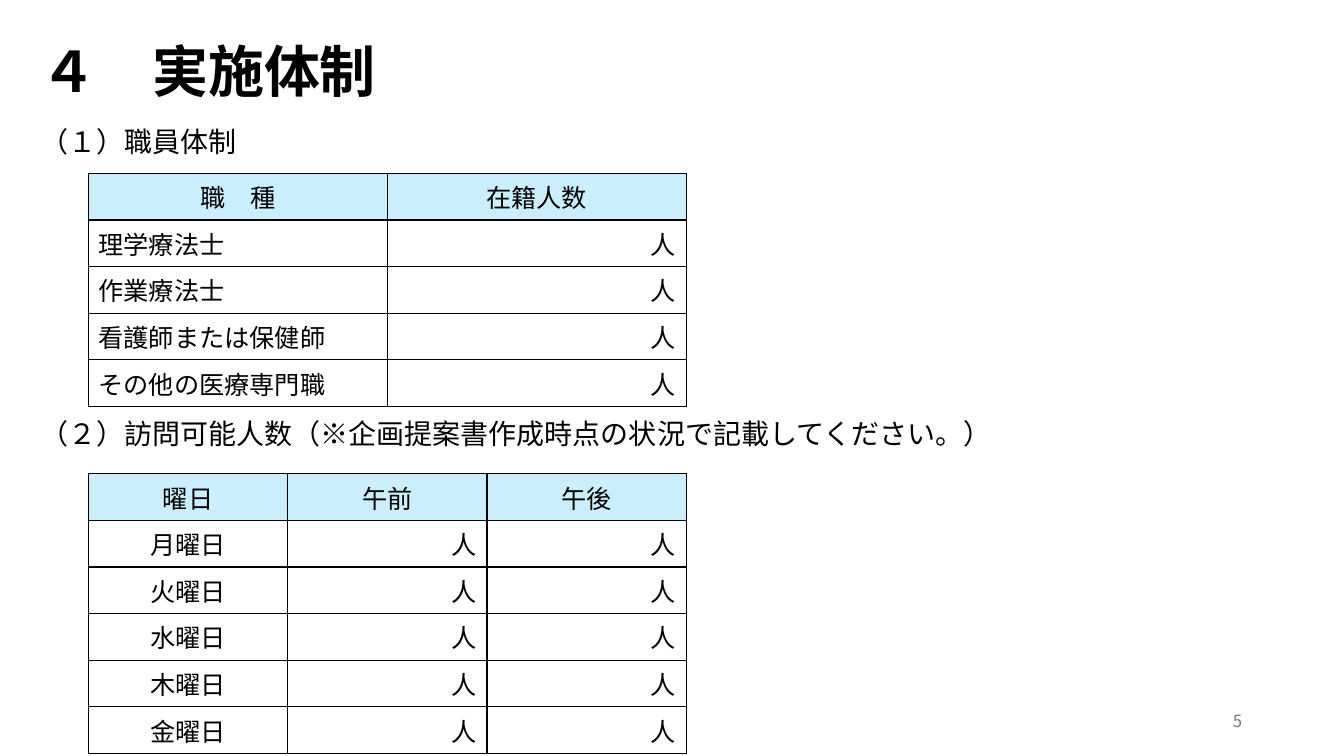
from pptx import Presentation
from pptx import util as u
from pptx.dml.color import RGBColor
from pptx.enum import text
from pptx.oxml import parse_xml
from pptx.oxml.ns import nsdecls, qn

FONT = "Noto Sans CJK JP"
COLORS = {"ink": "000000", "header": "CAEEFB", "page": "797979"}
LEFT, CENTER, RIGHT = (text.PP_ALIGN.LEFT, text.PP_ALIGN.CENTER,
                       text.PP_ALIGN.RIGHT)
HEADING = {"size": u.Pt(20), "bold": False}
CELL = {"size": u.Pt(18), "bold": False}
ROW_HEIGHT = 1.03


def write(tf, words, fmt, align=LEFT, color="ink", spacing=None):
    p = tf.paragraphs[0]
    p.alignment = align
    p.line_spacing = spacing
    r = p.add_run()
    r.text = words
    for name, value in {"name": FONT, **fmt}.items():
        setattr(r.font, name, value)
    r.font.color.rgb = RGBColor.from_string(COLORS[color])
    r.font._element.get_or_add_latin().addnext(
        parse_xml(f'<a:ea {nsdecls("a")} typeface="{FONT}"/>'))


def set_frame(tf):
    for name, value in {"word_wrap": True, "auto_size": text.MSO_AUTO_SIZE.NONE,
                        "vertical_anchor": text.MSO_ANCHOR.MIDDLE}.items():
        setattr(tf, name, value)


def add_title(s, box, words):
    sp = s.shapes.title
    sp.left, sp.top, sp.width, sp.height = map(u.Cm, box)
    set_frame(sp.text_frame)
    write(sp.text_frame, words, {"size": u.Pt(40), "bold": True}, spacing=0.9)


def add_text(s, box, words, fmt, **style):
    sp = s.shapes.add_textbox(*map(u.Cm, box))
    set_frame(sp.text_frame)
    write(sp.text_frame, words, fmt, **style)


def add_borders(cell):
    tc_pr = cell._tc.get_or_add_tcPr()
    for side in "LRTB":
        tc_pr.append(parse_xml(
            f'<a:ln{side} {nsdecls("a")} w="12700"><a:solidFill>'
            f'<a:srgbClr val="{COLORS["ink"]}"/></a:solidFill></a:ln{side}>'))


def add_count_table(s, left, top, width, header, labels, label_align):
    """Header row, then one row per label with 人 in every other column."""
    rows = [header] + [[label] + ["人"] * (len(header) - 1) for label in labels]
    frame = s.shapes.add_table(len(rows), len(header), u.Cm(left), u.Cm(top),
                               u.Cm(width), u.Cm(ROW_HEIGHT * len(rows)))
    table = frame.table
    table.first_row = table.horz_banding = False
    for column in table.columns:
        column.width = u.Cm(width / len(header))
    for i, row in enumerate(rows):
        table.rows[i].height = u.Cm(ROW_HEIGHT)
        for j, words in enumerate(row):
            cell = table.cell(i, j)
            add_borders(cell)
            if i == 0:
                cell.fill.solid()
                cell.fill.fore_color.rgb = RGBColor.from_string(COLORS["header"])
                align = CENTER
            else:
                cell.fill.background()
                align = label_align if j == 0 else RIGHT
            if align == CENTER:
                cell.vertical_anchor = text.MSO_ANCHOR.MIDDLE
            write(cell.text_frame, words, CELL, align)


def add_section(s, left, top, width, heading, table_gap, *table):
    """Heading with an indented table below it."""
    add_text(s, (left, top, width, 1.27), heading, HEADING, spacing=0.9)
    add_count_table(s, left + 1.47, top + table_gap, 15.06, *table)


def main():
    prs = Presentation()
    prs.slide_width, prs.slide_height = u.Inches(13.333), u.Inches(7.5)
    s = prs.slides.add_slide(prs.slide_layouts[5])
    left, width = 0.76, 31.6

    # Title
    add_title(s, (left, 0.58, width, 2.59), "４　実施体制")

    # Staff by profession
    add_section(s, left, 2.97, width, "（１）職員体制", 1.4,
                ["職　種", "在籍人数"],
                ["理学療法士", "作業療法士", "看護師または保健師",
                 "その他の医療専門職"], LEFT)

    # Visits by weekday
    add_section(s, left, 10.34, width,
                "（２）訪問可能人数（※企画提案書作成時点の状況で記載してください。）",
                1.6, ["曜日", "午前", "午後"],
                [f"{day}曜日" for day in "月火水木金"], CENTER)

    # Page number
    add_text(s, (23.93, 17.65, 7.62, 1.02), "5", {"size": u.Pt(12)},
             align=RIGHT, color="page")

    prs.save("out.pptx")


if __name__ == "__main__":
    main()
